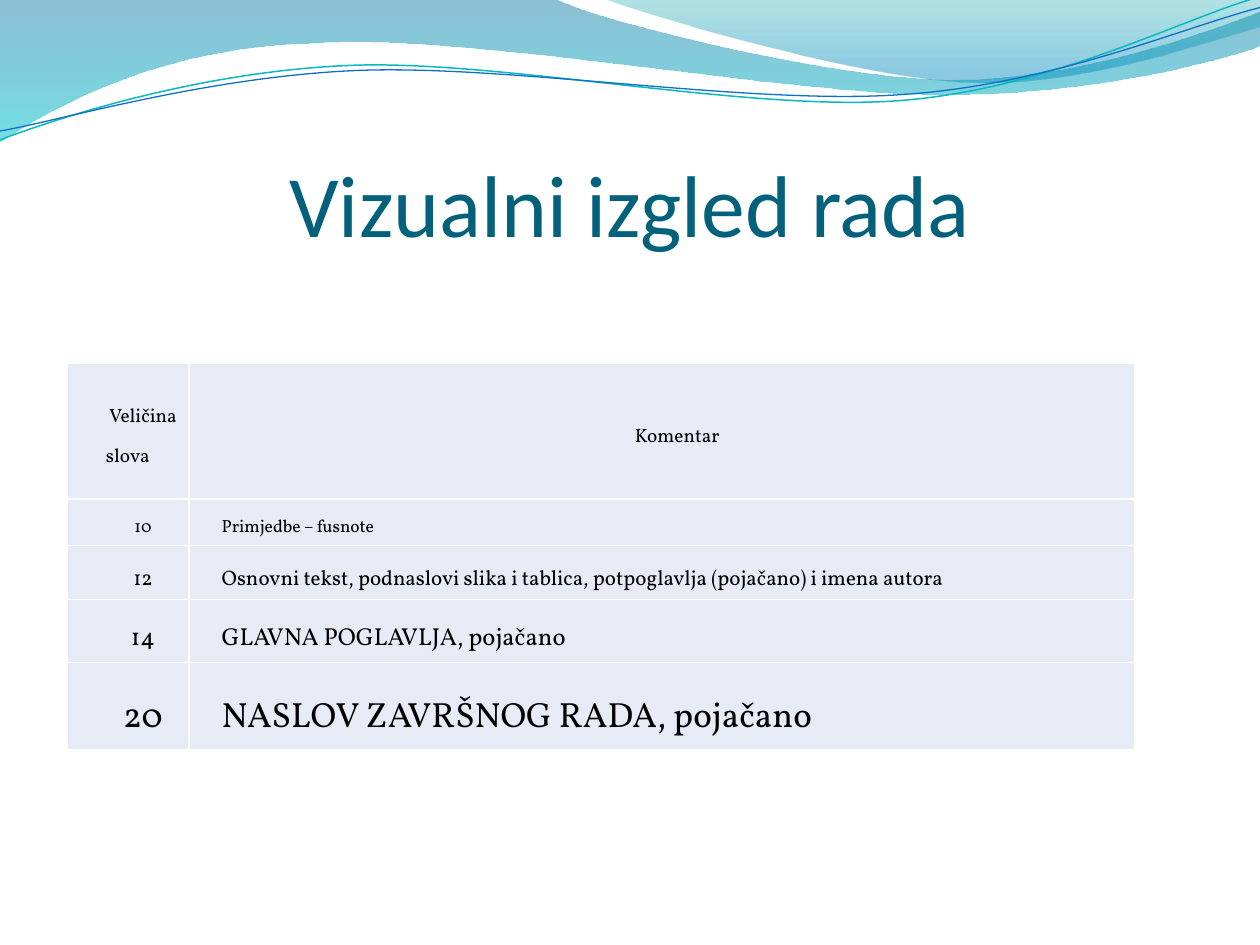
from lxml.etree import SubElement
from pptx import Presentation
from pptx.dml.color import RGBColor
from pptx.enum.text import MSO_ANCHOR, PP_ALIGN
from pptx.oxml.ns import qn
from pptx.util import Pt


def rgb(code):
    return RGBColor.from_string(code)


def write(frame, text, size, font="Vollkorn", color="000000",
          align=PP_ALIGN.CENTER, spacing=1.0, indent=0):
    paragraph = frame.paragraphs[0]
    paragraph.alignment = align
    paragraph.line_spacing = spacing
    paragraph._p.get_or_add_pPr().set("marL", "0")
    paragraph._p.get_or_add_pPr().set("indent", str(int(indent)))
    run = paragraph.add_run()
    run.text = text
    run.font.size = Pt(size)
    run.font.name = font
    run.font.color.rgb = rgb(color)


deck = Presentation()
unit = 914400
deck.slide_width = 10 * unit
deck.slide_height = int(7.5 * unit)
slide = deck.slides.add_slide(deck.slide_layouts[6])

left_wave = [
    (4.4, -0.01),
    (4.76, 0.17, 6.64, 0.63, 7.58, 0.63),
    (8.53, 0.63, 9.58, 0.26, 10, 0.09),
    (10.01, 0.36),
    (9.83, 0.44, 8.7, 0.76, 7.46, 0.75),
    (6.22, 0.75, 3.82, 0.28, 2.57, 0.34),
    (1.29, 0.36, 0.46, 0.83, -0.01, 1.13),
    (0, 0),
]
right_wave = [
    (5.09, 0.11, 6.82, 0.62, 7.69, 0.65),
    (8.56, 0.69, 9.61, 0.32, 10, 0.21),
    (10, 0),
    (4.79, -0.01),
]
teal_strand = [
    (0.48, 0.93, 1.58, 0.57, 2.77, 0.52),
    (3.95, 0.47, 5.93, 0.89, 7.13, 0.8),
    (8.33, 0.71, 9.38, 0.15, 9.98, -0.02),
]
blue_strand = [
    (0.47, 0.96, 1.64, 0.61, 2.83, 0.56),
    (4.03, 0.51, 5.97, 0.84, 7.17, 0.75),
    (8.36, 0.67, 9.41, 0.21, 10, 0.06),
]
ribbons = [
    ((0, 0), left_wave, [(0, "0074A1", 45), (1, "00C6CF", 55)], None),
    ((4.79, -0.01), right_wave, [(0, "00A1A9", 30), (0.8, "008BBF", 45)], None),
    ((0, 1.11), teal_strand, None, ("0AB8BF", 0.85)),
    ((0, 1.04), blue_strand, None, ("0F6FC6", 0.75)),
]

for start, segments, gradient, stroke in ribbons:
    points = [(segment[i] * unit, segment[i + 1] * unit)
              for segment in segments for i in range(0, len(segment), 2)]
    builder = slide.shapes.build_freeform(start[0] * unit, start[1] * unit)
    builder.add_line_segments(points, close=gradient is not None)
    ribbon = builder.convert_to_shape()
    ribbon.shadow.inherit = False

    corners = iter(list(ribbon._element.iter(qn("a:lnTo"))))
    for segment in segments:
        group = [next(corners) for _ in range(len(segment) // 2)]
        if len(group) == 3:
            curve = group[0].makeelement(qn("a:cubicBezTo"))
            group[0].addprevious(curve)
            for corner in group:
                curve.append(corner[0])
                corner.getparent().remove(corner)

    if gradient:
        ribbon.line.fill.background()
        ribbon.fill.gradient()
        ribbon.fill.gradient_angle = 270
        for stop, (position, color, opacity) in zip(ribbon.fill.gradient_stops, gradient):
            stop.position = position
            stop.color.rgb = rgb(color)
        stop_colors = ribbon._element.spPr.iter(qn("a:srgbClr"))
        for stop_color, (position, color, opacity) in zip(list(stop_colors), gradient):
            SubElement(stop_color, qn("a:alpha"), val=str(opacity * 1000))
    else:
        ribbon.fill.background()
        ribbon.line.color.rgb = rgb(stroke[0])
        ribbon.line.width = Pt(stroke[1])

title = slide.shapes.add_textbox(
    int(0.5 * unit), int(0.77 * unit), 9 * unit, int(1.25 * unit)).text_frame
title.word_wrap = True
title.vertical_anchor = MSO_ANCHOR.BOTTOM
title.margin_left = title.margin_right = title.margin_bottom = 0
title.margin_top = int(0.05 * unit)
write(title, "Vizualni izgled rada", 50, font="Calibri", color="04617B")

column_widths = [0.97, 7.51]
guidelines = [
    (1.08, 11, "Veličina slova", "Komentar", PP_ALIGN.CENTER),
    (0.37, 10, "10", "Primjedbe – fusnote", PP_ALIGN.JUSTIFY),
    (0.43, 12, "12", "Osnovni tekst, podnaslovi slika i tablica, potpoglavlja "
     "(pojačano) i imena autora", PP_ALIGN.LEFT),
    (0.5, 14, "14", "GLAVNA POGLAVLJA, pojačano", PP_ALIGN.JUSTIFY),
    (0.69, 20, "20", "NASLOV ZAVRŠNOG RADA, pojačano", PP_ALIGN.JUSTIFY),
]
sizes = slide.shapes.add_table(
    len(guidelines), len(column_widths), int(0.53 * unit), int(2.88 * unit),
    int(sum(column_widths) * unit), int(3.07 * unit)).table
sizes.first_row = False
sizes.horz_banding = False
for column, width in zip(sizes.columns, column_widths):
    column.width = int(width * unit)

for row, (height, size, sample, remark, remark_align) in zip(sizes.rows, guidelines):
    row.height = int(height * unit)
    contents = [(sample, PP_ALIGN.CENTER), (remark, remark_align)]
    for cell, (text, align) in zip(row.cells, contents):
        cell.vertical_anchor = MSO_ANCHOR.MIDDLE
        cell.margin_left = cell.margin_right = int(0.02 * unit)
        cell.margin_top = cell.margin_bottom = int(0.02 * unit)
        cell.fill.solid()
        cell.fill.fore_color.rgb = rgb("E7EBF5")
        write(cell.text_frame, text, size, align=align, spacing=1.5, indent=0.24 * unit)
        properties = cell._tc.get_or_add_tcPr()
        for order, side in enumerate(["lnL", "lnR", "lnT", "lnB"]):
            border = properties.makeelement(qn(f"a:{side}"), w=str(Pt(1)))
            SubElement(SubElement(border, qn("a:solidFill")), qn("a:srgbClr"), val="FFFFFF")
            properties.insert(order, border)

deck.save("out.pptx")
